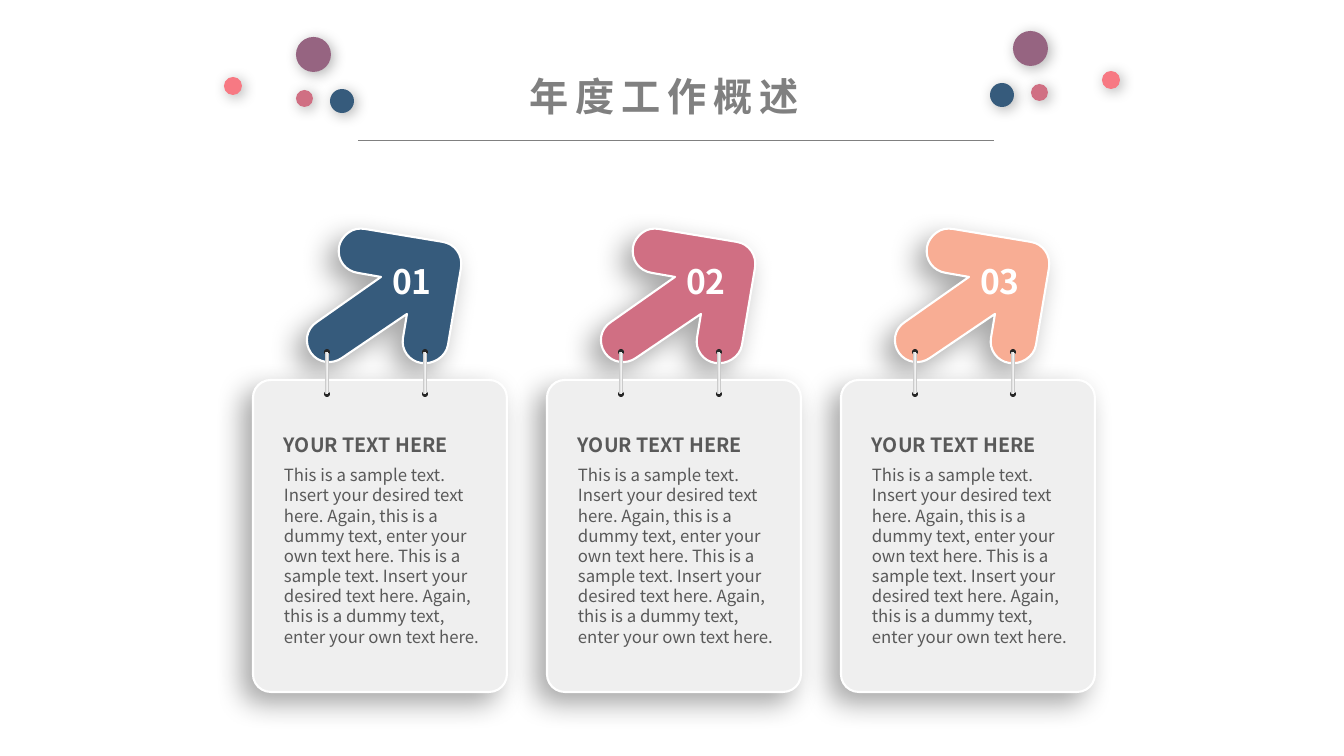
from lxml import etree
from pptx import Presentation
from pptx.dml.color import RGBColor
from pptx.enum.shapes import MSO_CONNECTOR, MSO_SHAPE
from pptx.enum.text import MSO_ANCHOR, MSO_AUTO_SIZE, PP_ALIGN
from pptx.oxml import parse_xml
from pptx.oxml.ns import nsdecls, qn
from pptx.util import Pt

OVAL, ROUNDED = MSO_SHAPE.OVAL, MSO_SHAPE.ROUNDED_RECTANGLE
STRAIGHT = MSO_CONNECTOR.STRAIGHT
TOP, MIDDLE = MSO_ANCHOR.TOP, MSO_ANCHOR.MIDDLE
LEFT, CENTER = PP_ALIGN.LEFT, PP_ALIGN.CENTER
NO_FIT = MSO_AUTO_SIZE.NONE
WIDTH, HEIGHT = 1344, 756
PX = 12192000 / WIDTH
FONT = "Noto Sans CJK SC"
COLORS = {
    "navy": "365B7C", "rose": "D06F83", "peach": "F8AD94",
    "plum": "966481", "coral": "F77983", "white": "FFFFFF",
    "card": "EFEFEF", "hole": "262626", "title": "808080", "text": "595959",
    "pin_edge": "BFBFBF", "pin_middle": "F2F2F2", "shadow": "000000",
}
RGB = {name: RGBColor.from_string(value) for name, value in COLORS.items()}
CARD_SHADOW = (20, 10, 136, 34)
DOT_SHADOW = (10, 3, 45, 30)
BODY = ("This is a sample text. Insert your desired text here. "
        "Again, this is a dummy text, enter your own text here. "
        "This is a sample text. Insert your desired text here. "
        "Again, this is a dummy text, enter your own text here.")
PITCH = 294
ARROW_START = (348, 233)
ARROW = [
    [(353, 229), (359, 228), (365, 229)], [(443, 242)],
    [(455, 244), (463, 255), (461, 268)], [(448, 345)],
    [(446, 357), (433, 365), (421, 363)], [(409, 361), (401, 350), (403, 338)],
    [(407, 314)], [(342, 358)],
    [(332, 365), (318, 363), (311, 353)], [(304, 343), (306, 329), (317, 322)],
    [(381, 277)], [(358, 273)],
    [(345, 271), (337, 260), (339, 247)], [(340, 241), (344, 236), (348, 233)],
]


def px(*lengths):
    return [round(n * PX) for n in lengths]


def style(sp, fill, outline=None, shadow=None):
    sp.fill.solid()
    sp.fill.fore_color.rgb = RGB[fill]
    if outline:
        sp.line.color.rgb = RGB[outline]
        sp.line.width = Pt(1.5)
    else:
        sp.line.fill.background()
    sp.shadow.inherit = False
    if shadow:
        blur, dist, angle, alpha = shadow
        effects = sp._element.spPr.find(qn("a:effectLst"))
        effects.append(parse_xml(
            f'<a:outerShdw {nsdecls("a")} blurRad="{Pt(blur)}" dist="{Pt(dist)}" '
            f'dir="{angle * 60000}" algn="ctr" rotWithShape="0">'
            f'<a:srgbClr val="{COLORS["shadow"]}"><a:alpha val="{alpha * 1000}"/>'
            '</a:srgbClr></a:outerShdw>'))


prs = Presentation()
prs.slide_width, prs.slide_height = px(WIDTH, HEIGHT)
s = prs.slides.add_slide(prs.slide_layouts[5])

title = s.shapes.title
title.left, title.top, title.width, title.height = px(519, 67, 300, 57)
tf = title.text_frame
tf.word_wrap = False
tf.auto_size = NO_FIT
tf.vertical_anchor = MIDDLE
p = tf.paragraphs[0]
p.alignment = LEFT
r = p.add_run()
r.text = "年度工作概述"
r.font.name = FONT
r.font.size = Pt(28)
r.font.bold = True
r.font.color.rgb = RGB["title"]
rPr = r._r.get_or_add_rPr()
rPr.set("spc", "500")
etree.SubElement(rPr, qn("a:ea")).set("typeface", FONT)

rule = s.shapes.add_connector(STRAIGHT, *px(358, 140, 994, 140))
rule.line.color.rgb = RGB["title"]
rule.line.width = Pt(0.5)
etree.SubElement(rule._element.spPr, qn("a:effectLst"))

for x, y, size, color in [(296, 90, 17, "rose"), (296, 37, 35, "plum"),
                          (330, 89, 24, "navy"), (224, 77, 18, "coral")]:
    for left, top in [(x, y), (WIDTH - x - size, y - 6)]:
        dot = s.shapes.add_shape(OVAL, *px(left, top, size, size))
        style(dot, color, shadow=DOT_SHADOW)

for i, color in enumerate(["navy", "rose", "peach"]):
    dx = i * PITCH

    builder = s.shapes.build_freeform(*px(ARROW_START[0] + dx, ARROW_START[1]))
    builder.add_line_segments([px(x + dx, y) for segment in ARROW for x, y in segment])
    arrow = builder.convert_to_shape()
    lines = iter(list(arrow._element.iter(qn("a:lnTo"))))
    for segment in ARROW:
        first, *rest = [next(lines) for point in segment]
        if rest:
            curve = etree.Element(qn("a:cubicBezTo"))
            first.addprevious(curve)
            for line in (first, *rest):
                curve.append(line[0])
                line.getparent().remove(line)
    outline = arrow._element.find(".//" + qn("a:path"))
    etree.SubElement(outline, qn("a:close"))
    style(arrow, color, "white", CARD_SHADOW)

    card = s.shapes.add_shape(ROUNDED, *px(253 + dx, 380, 254, 312))
    card.adjustments[0] = 0.07
    style(card, "card", "white", CARD_SHADOW)

    for x in (425 + dx, 327 + dx):
        for y in (394, 352):
            hole = s.shapes.add_shape(OVAL, *px(x - 3, y - 3, 6, 6))
            style(hole, "hole")
        pin = s.shapes.add_shape(ROUNDED, *px(x - 2, 352, 4, 42))
        pin.adjustments[0] = 0.5
        style(pin, "pin_middle")
        pin.fill.gradient()
        pin.fill.gradient_angle = 0
        stops = pin.fill._fill._gradFill.find(qn("a:gsLst"))
        for stop in list(stops):
            stops.remove(stop)
        for pos, shade in [(0, "pin_edge"), (50, "pin_middle"), (100, "pin_edge")]:
            gs = etree.SubElement(stops, qn("a:gs"), pos=str(pos * 1000))
            etree.SubElement(gs, qn("a:srgbClr"), val=COLORS[shade])

    for text, area, size, bold, ink, align, anchor in [
        (f"{i + 1:02}", (376, 256, 72, 50), 24, True, "white", CENTER, MIDDLE),
        ("YOUR TEXT HERE", (274, 433, 216, 18), 14, True, "text", LEFT, TOP),
        (BODY, (274, 465, 216, 187), 12, False, "text", LEFT, TOP),
    ]:
        x, y, w, h = area
        tf = s.shapes.add_textbox(*px(x + dx, y, w, h)).text_frame
        tf.word_wrap = True
        tf.vertical_anchor = anchor
        tf.margin_top = tf.margin_bottom = 0
        p = tf.paragraphs[0]
        p.text = text
        p.alignment = align
        p.font.name = FONT
        p.font.size = Pt(size)
        p.font.bold = bold
        p.font.color.rgb = RGB[ink]

prs.save("out.pptx")
